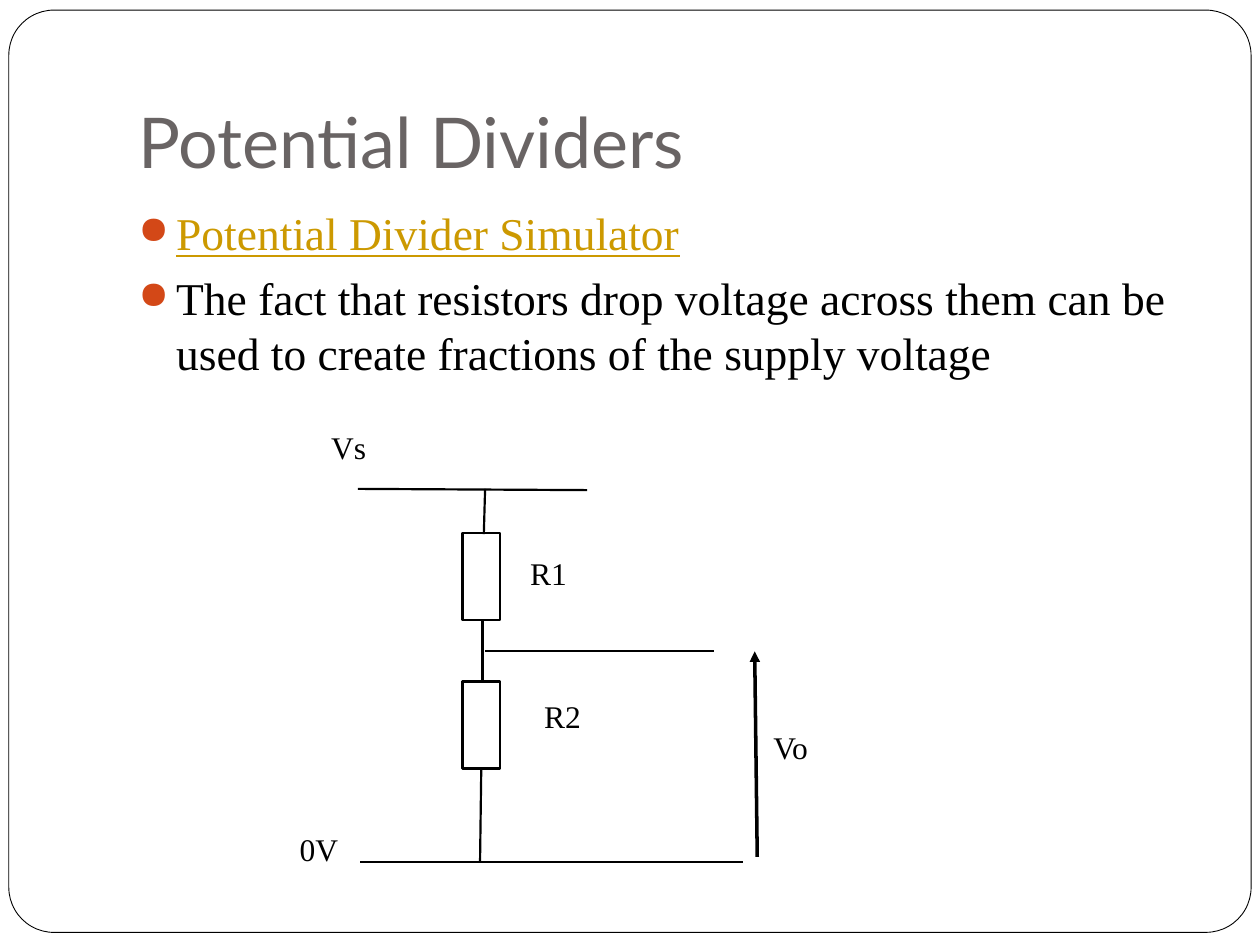
from lxml import etree
from pptx import Presentation
from pptx.dml.color import RGBColor
from pptx.enum.shapes import MSO_CONNECTOR, MSO_SHAPE
from pptx.enum.text import MSO_ANCHOR
from pptx.oxml.ns import qn
from pptx.util import Inches, Pt

STRAIGHT = MSO_CONNECTOR.STRAIGHT
RECTANGLE = MSO_SHAPE.RECTANGLE
ROUNDED = MSO_SHAPE.ROUNDED_RECTANGLE
TOP, BOTTOM = MSO_ANCHOR.TOP, MSO_ANCHOR.BOTTOM
SERIF = "Times New Roman"


def color(value):
    return RGBColor.from_string(value)


def add_text(left, top, width, height, lines, wrap=True, anchor=TOP):
    box = page.shapes.add_textbox(Inches(left), Inches(top), Inches(width), Inches(height))
    frame = box.text_frame
    frame.word_wrap = wrap
    frame.vertical_anchor = anchor
    for index, (text, ink, formats) in enumerate(lines):
        para = frame.paragraphs[0] if index == 0 else frame.add_paragraph()
        span = para.add_run()
        span.text = text
        span.font.color.rgb = color(ink)
        for name, value in formats.items():
            setattr(span.font, name, value)
    return frame


deck = Presentation()
deck.slide_width, deck.slide_height = Inches(10), Inches(7.5)
page = deck.slides.add_slide(deck.slide_layouts[6])

border = page.shapes.add_shape(ROUNDED, Inches(0.07), Inches(0.08), Inches(9.86), Inches(7.32))
border.adjustments[0] = 0.049
border.shadow.inherit = False
border.fill.solid()
border.fill.fore_color.rgb = color("FFFFFF")
border.line.color.rgb = color("000000")
border.line.width = Pt(0.5)

title_format = {"name": "Lato", "size": Pt(40)}
title = add_text(1, 0.3, 8.5, 1.25, [("Potential Dividers", "696464", title_format)], anchor=BOTTOM)
title.margin_bottom = Inches(0.1)

body_format = {"name": SERIF, "size": Pt(26)}
body = add_text(1, 1.58, 8.5, 1.93, [
    ("Potential Divider Simulator", "CC9900", body_format | {"underline": True}),
    ("The fact that resistors drop voltage across them can be used to create "
     "fractions of the supply voltage", "000000", body_format),
])
for para in body.paragraphs:
    para.space_before = Pt(5.8)
    properties = para._p.get_or_add_pPr()
    properties.set("marL", str(Inches(0.3)))
    properties.set("indent", str(-Inches(0.3)))
    bullet_color = etree.SubElement(properties, qn("a:buClr"))
    etree.SubElement(bullet_color, qn("a:srgbClr"), val="D34817")
    etree.SubElement(properties, qn("a:buSzPct"), val="85000")
    etree.SubElement(properties, qn("a:buChar"), char="●")

wires = [
    (2.84, 3.88, 4.66, 3.89),
    (2.86, 6.84, 5.9, 6.84),
    (3.82, 6.09, 3.81, 6.84),
    (3.85, 3.88, 3.84, 4.24),
    (3.83, 4.92, 3.83, 5.4),
    (3.85, 5.17, 5.67, 5.17),
    (6.01, 6.8, 5.99, 5.17),
]
for ends in wires:
    wire = page.shapes.add_connector(STRAIGHT, *map(Inches, ends))
    wire.line.color.rgb = color("000000")
    wire.line.width = Pt(1.25)
    etree.SubElement(wire._element.spPr, qn("a:effectLst"))

output_arrow = wire
output_arrow.line.width = Pt(2)
etree.SubElement(output_arrow.line._get_or_add_ln(), qn("a:tailEnd"), type="triangle")

for top in (4.23, 5.41):
    resistor = page.shapes.add_shape(RECTANGLE, Inches(3.67), Inches(top), Inches(0.3), Inches(0.69))
    resistor.shadow.inherit = False
    resistor.fill.background()
    resistor.line.color.rgb = color("000000")
    resistor.line.width = Pt(1.5)

labels = [
    ("Vs", 2.53, 3.35, 0.56),
    ("0V", 2.28, 6.54, 0.61),
    ("R1", 4.11, 4.35, 0.61),
    ("R2", 4.22, 5.48, 0.61),
    ("Vo", 6.04, 5.73, 0.57),
]
label_format = {"name": SERIF, "size": Pt(18)}
for text, left, top, width in labels:
    add_text(left, top, width, 0.51, [(text, "000000", label_format)], wrap=False)

deck.save("out.pptx")
